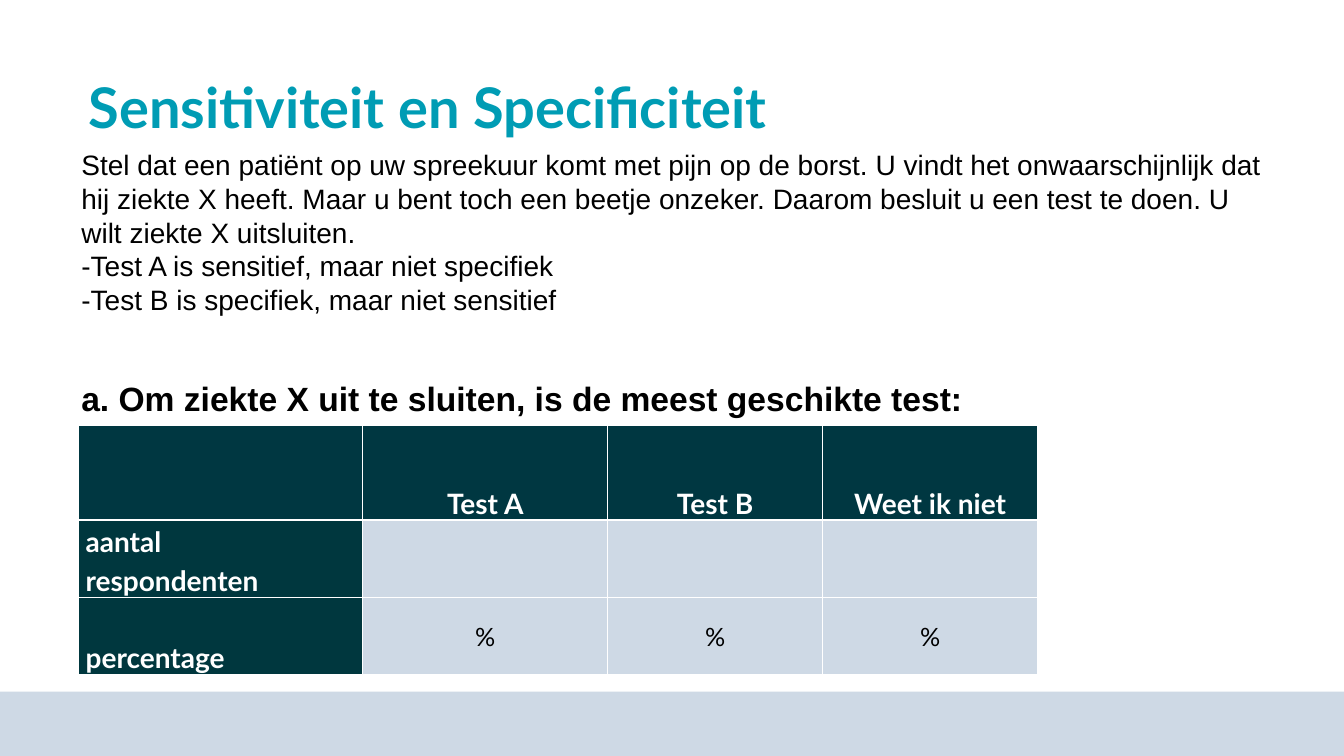
from pptx import Presentation
from pptx.dml.color import RGBColor
from pptx.enum import shapes, text
from pptx.util import Pt

COLOURS = {
    "title": "009CB4",
    "body": "000000",
    "header": "003741",
    "label": "00373E",
    "light": "CED9E5",
    "white": "FFFFFF",
}
SLIDE_WIDTH, SLIDE_HEIGHT = 960, 540
LEFT = 56.16

CASE = (
    "Stel dat een patiënt op uw spreekuur komt met pijn op de borst. "
    "U vindt het onwaarschijnlijk dat hij ziekte X heeft. "
    "Maar u bent toch een beetje onzeker. Daarom besluit u een test te doen. "
    "U wilt ziekte X uitsluiten.\v"
    "-Test A is sensitief, maar niet specifiek\v"
    "-Test B is specifiek, maar niet sensitief"
)
QUESTION = "a. Om ziekte X uit te sluiten, is de meest geschikte test:"
ANSWERS = [
    ["", "Test A", "Test B", "Weet ik niet"],
    ["aantal\nrespondenten", "", "", ""],
    ["percentage", "%", "%", "%"],
]
COLUMN_WIDTHS = [203, 175, 153.5, 153.5]
ROW_HEIGHTS = [67.5, 55.2, 55.2]


def colour(name):
    return RGBColor.from_string(COLOURS[name])


def format_runs(paragraph, font_name, size, colour_name, bold=False):
    for run in paragraph.runs:
        run.font.name = font_name
        run.font.size = Pt(size)
        run.font.bold = bold
        run.font.color.rgb = colour(colour_name)


def add_footer_band(slide, left, top, width, height):
    band = slide.shapes.add_shape(
        shapes.MSO_SHAPE.RECTANGLE, Pt(left), Pt(top), Pt(width), Pt(height))
    band.shadow.inherit = False
    band.fill.solid()
    band.fill.fore_color.rgb = colour("light")
    band.line.fill.background()


def fill_title(slide, left, top, width, height):
    title = slide.shapes.title
    title.left, title.top = Pt(left), Pt(top)
    title.width, title.height = Pt(width), Pt(height)
    frame = title.text_frame
    frame.text = "Sensitiviteit en Specificiteit"
    frame.auto_size = text.MSO_AUTO_SIZE.NONE
    frame.vertical_anchor = text.MSO_ANCHOR.MIDDLE
    heading = frame.paragraphs[0]
    heading.alignment = text.PP_ALIGN.LEFT
    heading.line_spacing = 0.9
    format_runs(heading, "Lato", 40, "title", bold=True)


def add_case(slide, left, top, width, height):
    """Add the patient case with the question below it."""
    frame = slide.shapes.add_textbox(
        Pt(left), Pt(top), Pt(width), Pt(height)).text_frame
    frame.word_wrap = True
    frame.vertical_anchor = text.MSO_ANCHOR.MIDDLE
    case = frame.paragraphs[0]
    case.text = CASE
    format_runs(case, "Arial", 20, "body")
    question = frame.add_paragraph()
    question.text = QUESTION
    question.space_before = Pt(44)
    format_runs(question, "Arial", 24, "body", bold=True)


def fill_answer_cell(cell, content, is_header, is_label):
    cell.margin_left = cell.margin_right = Pt(5)
    cell.margin_top = cell.margin_bottom = 0
    is_value = not (is_header or is_label)
    cell.vertical_anchor = (
        text.MSO_ANCHOR.MIDDLE if is_value else text.MSO_ANCHOR.BOTTOM)
    cell.fill.solid()
    cell.fill.fore_color.rgb = colour(
        "header" if is_header else "label" if is_label else "light")
    cell.text_frame.text = content
    for paragraph in cell.text_frame.paragraphs:
        if not is_label:
            paragraph.alignment = text.PP_ALIGN.CENTER
        if is_value:
            format_runs(paragraph, "Lato", 18, "body")
        else:
            paragraph.line_spacing = 1.15
            format_runs(paragraph, "Lato", 20, "white", bold=True)


def add_answers(slide, left, top):
    """Add the answer table; its default style draws the white rules."""
    answers = slide.shapes.add_table(
        len(ANSWERS), len(COLUMN_WIDTHS), Pt(left), Pt(top),
        Pt(sum(COLUMN_WIDTHS)), Pt(sum(ROW_HEIGHTS))).table
    answers.first_col = True
    answers.horz_banding = False
    for column, width in zip(answers.columns, COLUMN_WIDTHS):
        column.width = Pt(width)
    for row, height in zip(answers.rows, ROW_HEIGHTS):
        row.height = Pt(height)
    for r, contents in enumerate(ANSWERS):
        for c, content in enumerate(contents):
            fill_answer_cell(answers.cell(r, c), content, r == 0, c == 0)


def main():
    deck = Presentation()
    deck.slide_width, deck.slide_height = Pt(SLIDE_WIDTH), Pt(SLIDE_HEIGHT)
    slide = deck.slides.add_slide(deck.slide_layouts.get_by_name("Title Only"))
    add_footer_band(slide, 0, 494, SLIDE_WIDTH, SLIDE_HEIGHT - 494)
    fill_title(slide, LEFT, 53.3, 769, 51)
    add_answers(slide, LEFT, 304)
    add_case(slide, 51, 100, 868, 204)
    deck.save("out.pptx")


if __name__ == "__main__":
    main()
